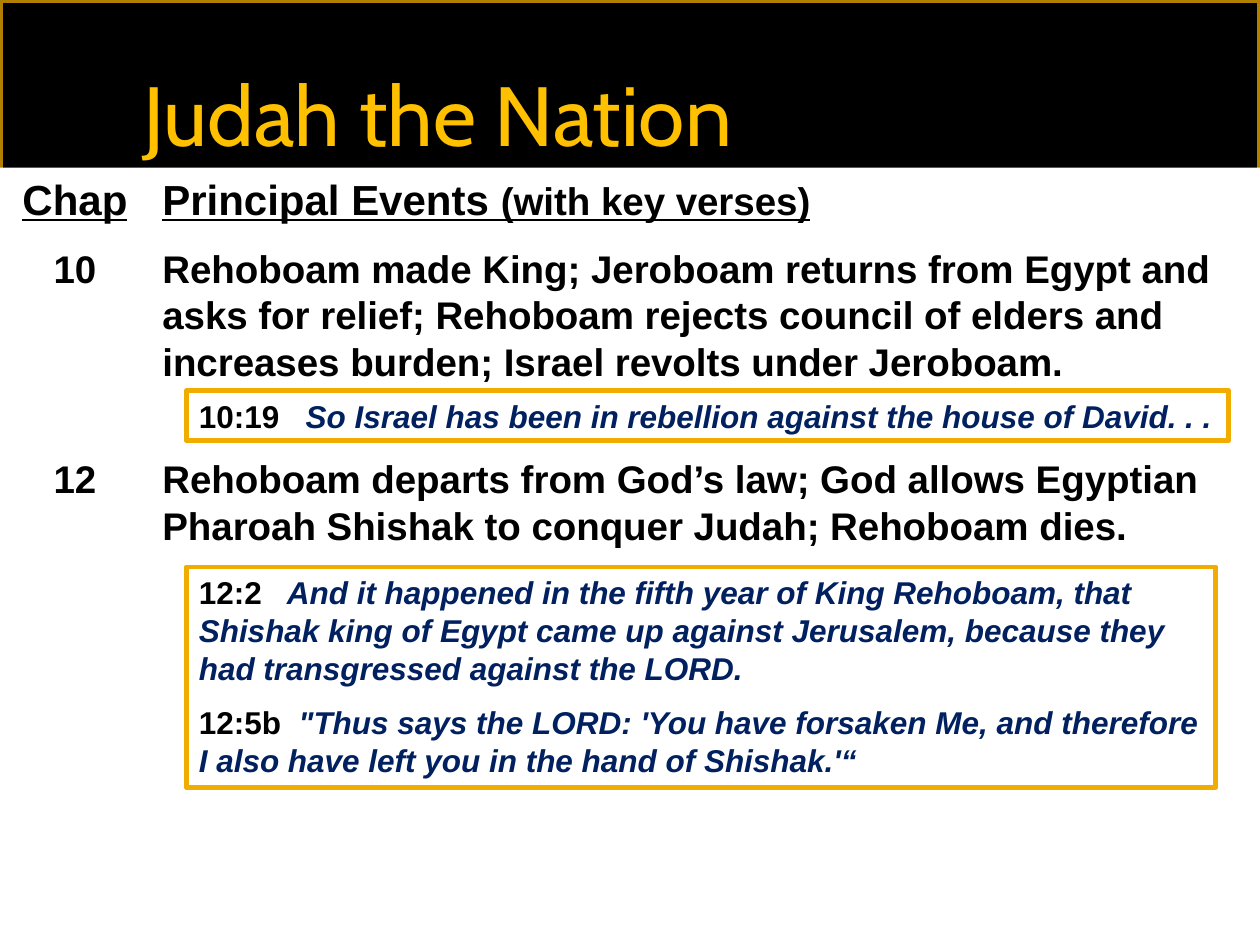
from dataclasses import dataclass
from typing import Optional

from pptx import Presentation
from pptx.dml.color import RGBColor
from pptx.enum.shapes import MSO_SHAPE as Shape
from pptx.enum.text import MSO_ANCHOR as Anchor, PP_ALIGN as Align
from pptx.util import Inches, Pt

WIDE, HIGH = Inches(10), Inches(7.5)
COLS, ROWS = 100, 75
BLACK, WHITE, NAVY = "000000", "FFFFFF", "002060"
GOLD, AMBER, BRONZE = "FFC000", "F0AD00", "B28000"


@dataclass(frozen=True)
class Run:
    """A stretch of text in one style."""
    text: str
    size: float = 22
    color: str = BLACK
    font: str = "Arial"
    bold: bool = True
    slant: bool = False
    under: bool = False


@dataclass(frozen=True)
class Para:
    """A paragraph and the gap above it in points."""
    runs: tuple[Run, ...]
    gap: float = 0


@dataclass(frozen=True)
class Box:
    """A rectangle in grid columns and rows, with its text."""
    left: float
    top: float
    cols: float
    rows: float
    paras: tuple[Para, ...] = ()
    fill: Optional[str] = None
    line: Optional[str] = None
    weight: float = 2.75
    align: Align = Align.LEFT


def paint(code: str) -> RGBColor:
    """Turn a hex string into a colour."""
    return RGBColor.from_string(code)


def head(text: str, size: float = 24) -> Run:
    """Make an underlined column heading."""
    return Run(text, size, under=True)


def verse(mark: str, words: str, gap: float = 0) -> Para:
    """Make a key verse with its reference."""
    return Para((Run(mark, 18), Run(words, 18, NAVY, slant=True)), gap)


def write(frame, box: Box) -> None:
    """Fill a text frame with the paragraphs of a box."""
    frame.word_wrap = True
    frame.vertical_anchor = Anchor.TOP
    frame.margin_left = frame.margin_right = Inches(0.1)
    frame.margin_top = frame.margin_bottom = Inches(0.05)
    for i, item in enumerate(box.paras):
        para = frame.add_paragraph() if i else frame.paragraphs[0]
        para.alignment = box.align
        para.space_before = Pt(item.gap)
        for part in item.runs:
            run = para.add_run()
            run.text = part.text
            font = run.font
            font.name, font.size = part.font, Pt(part.size)
            font.bold, font.italic = part.bold, part.slant
            font.underline = part.under
            font.color.rgb = paint(part.color)


def draw(slide, box: Box) -> None:
    """Draw one box on the slide."""
    shape = slide.shapes.add_shape(
        Shape.RECTANGLE,
        round(WIDE * box.left / COLS), round(HIGH * box.top / ROWS),
        round(WIDE * box.cols / COLS), round(HIGH * box.rows / ROWS))
    shape.shadow.inherit = False
    if box.fill:
        shape.fill.solid()
        shape.fill.fore_color.rgb = paint(box.fill)
    else:
        shape.fill.background()
    if box.line:
        shape.line.color.rgb = paint(box.line)
        shape.line.width = Pt(box.weight)
    else:
        shape.line.fill.background()
    if box.paras:
        write(shape.text_frame, box)


TITLE = Run("Judah the Nation", 48, GOLD, "Cabin", bold=False)
CHAPS = (
    Para((head("Chap"),)),
    Para((Run("10"),), 12),
    Para((Run("12"),), 93.7),
)
EVENTS = (
    Para((head("Principal Events "), head("(with key verses)", 22))),
    Para((Run("Rehoboam made King; Jeroboam returns from Egypt and asks for "
              "relief; Rehoboam rejects council of elders and increases "
              "burden; Israel revolts under Jeroboam."),), 12),
    Para((Run("Rehoboam departs from God’s law; God allows Egyptian Pharoah "
              "Shishak to conquer Judah; Rehoboam dies."),), 41),
)
REVOLT = (
    verse("10:19   ", "So Israel has been in rebellion against the house of "
                      "David. . ."),
)
SHISHAK = (
    verse("12:2  ", " And it happened in the fifth year of King Rehoboam, that "
                    "Shishak king of Egypt came up against Jerusalem, because "
                    "they had transgressed against the LORD."),
    verse("12:5b", "  \"Thus says the LORD: 'You have forsaken Me, and "
                   "therefore I also have left you in the hand of "
                   "Shishak.'“", 9.5),
)
SPLIT, TOP, INDENT = 11.9, 13.3, 14.8
BOXES = (
    Box(0, 0, COLS, 14.2, fill=BLACK, line=BRONZE, weight=3.78),
    Box(10.4, 4.5, 62.4, 8.5, (Para((TITLE,)),)),
    Box(0, TOP, SPLIT, 42.6, CHAPS, WHITE, align=Align.CENTER),
    Box(SPLIT, TOP, COLS - SPLIT, 34.2, EVENTS, WHITE),
    Box(INDENT, 31, 82.7, 4, REVOLT, line=AMBER),
    Box(INDENT, 45, 81.7, 17.5, SHISHAK, line=AMBER),
)


def main() -> None:
    """Build the slide and save it."""
    deck = Presentation()
    deck.slide_width, deck.slide_height = WIDE, HIGH
    slide = deck.slides.add_slide(deck.slide_layouts[6])
    for box in BOXES:
        draw(slide, box)
    deck.save("out.pptx")


if __name__ == "__main__":
    main()
